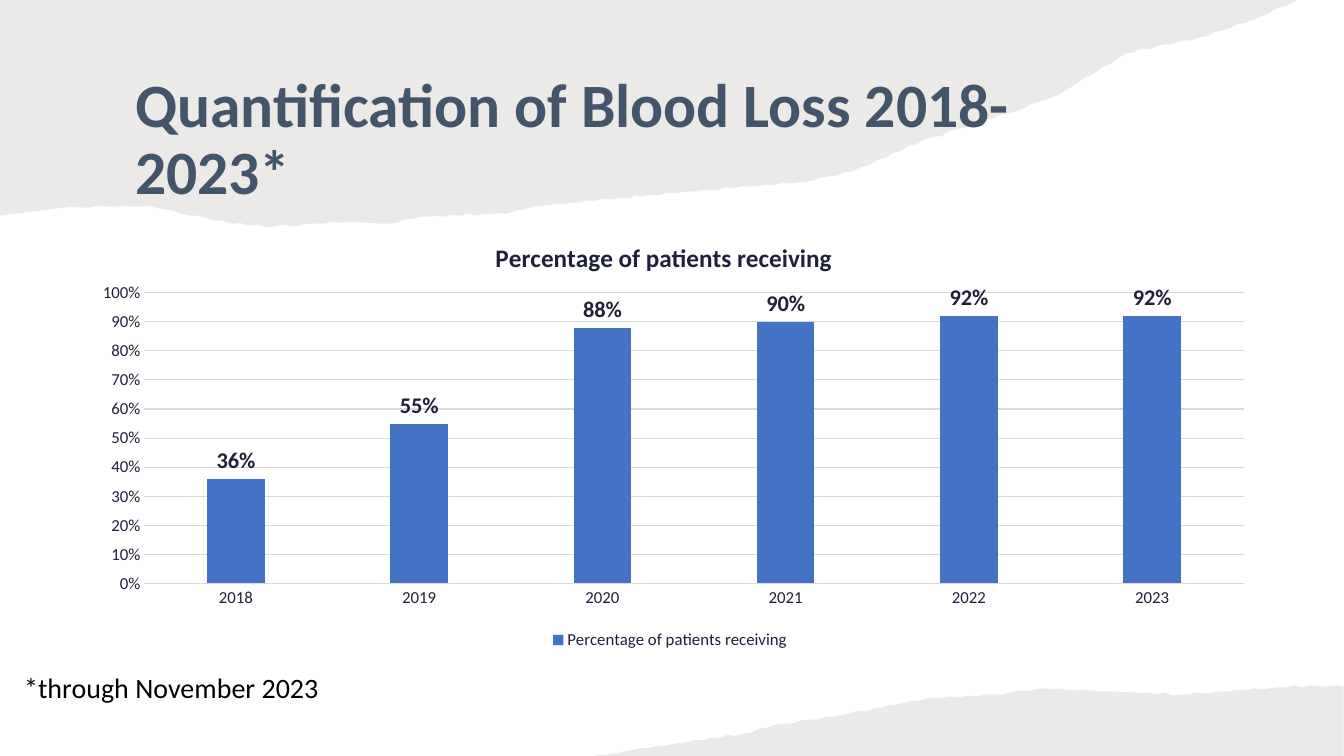
import math

import pptx
import pptx.chart.data
import pptx.enum.chart
import pptx.enum.text
import pptx.oxml
import pptx.oxml.ns
import pptx.util
from pptx.dml.color import RGBColor
from pptx.util import Cm, Pt

SLATE = RGBColor(0x44, 0x54, 0x6A)
NAVY = RGBColor(0x1F, 0x21, 0x3A)
BLACK = RGBColor(0x00, 0x00, 0x00)
BLUE = RGBColor(0x44, 0x72, 0xC4)
GRID_GRAY = RGBColor(0xD9, 0xD9, 0xD9)
PAPER = RGBColor(0x82, 0x76, 0x6A)

# Main bends of the torn edges, in hundredths of an inch
OUTLINE_UNIT = Cm(0.0254)
TOP_CORNERS = [(0, 0)]
TOP_EDGE = [(1287, 0), (1243, 20), (1190, 37), (1117, 53), (1052, 93), (1001, 112),
            (917, 139), (846, 170), (800, 180), (686, 190), (591, 199), (528, 205),
            (503, 212), (418, 215), (385, 222), (346, 220), (262, 225), (214, 219),
            (147, 204), (63, 206), (0, 214)]
BOTTOM_CORNERS = [(1333, 750)]
BOTTOM_EDGE = [(589, 750), (668, 738), (737, 728), (769, 719), (828, 711), (866, 703),
               (920, 693), (985, 689), (1036, 683), (1171, 689), (1300, 680), (1333, 681)]

METRIC = "Percentage of patients receiving"
SHARES = {"2018": 0.36, "2019": 0.55, "2020": 0.88,
          "2021": 0.90, "2022": 0.92, "2023": 0.92}


def roughen(edge, step=8):
    """Split an edge into short steps with a slight ripple."""
    points = []
    for (x1, y1), (x2, y2) in zip(edge, edge[1:]):
        count = max(1, round(abs(x2 - x1) / step))
        for index in range(count):
            part = index / count
            x = x1 + (x2 - x1) * part
            ripple = math.sin(x * 2) if index else 0
            points.append((x, y1 + (y2 - y1) * part + ripple))
    return points + [edge[-1]]


class SlideBuilder:
    """Holds the style and the current slide."""

    font_name = "Calibri"

    def __init__(self, presentation):
        title_only = presentation.slide_layouts[5]
        self.slide = presentation.slides.add_slide(title_only)

    def style_font(self, font, size, color, bold=False):
        font.name = self.font_name
        font.size = Pt(size)
        font.bold = bold
        font.color.rgb = color

    def fill_text(self, shape, text, size, color, bold=False):
        frame = shape.text_frame
        frame.text = text
        frame.word_wrap = True
        paragraph = frame.paragraphs[0]
        paragraph.alignment = pptx.enum.text.PP_ALIGN.LEFT
        paragraph.line_spacing = 0.9
        self.style_font(paragraph.runs[0].font, size, color, bold)
        return paragraph

    def torn_paper(self, corners, edge):
        points = corners + roughen(edge)
        builder = self.slide.shapes.build_freeform(*points[0], scale=OUTLINE_UNIT)
        builder.add_line_segments(points[1:], close=True)
        shape = builder.convert_to_shape()
        shape.shadow.inherit = False
        shape.line.fill.background()
        shape.fill.solid()
        shape.fill.fore_color.rgb = PAPER
        color = shape._element.spPr.find(".//" + pptx.oxml.ns.qn("a:srgbClr"))
        color.append(pptx.oxml.parse_xml(
            f'<a:alpha {pptx.oxml.ns.nsdecls("a")} val="15000"/>'))

    def title(self, text, left, top, width, height):
        shape = self.slide.shapes.title
        shape.left, shape.top, shape.width, shape.height = left, top, width, height
        self.fill_text(shape, text, 44, SLATE, bold=True)
        shape.text_frame.vertical_anchor = pptx.enum.text.MSO_ANCHOR.MIDDLE
        # Bring the title in front of the paper
        self.slide.shapes._spTree.append(shape._element)

    def note(self, text, left, top, width, height):
        box = self.slide.shapes.add_textbox(left, top, width, height)
        self.fill_text(box, text, 20, BLACK).space_after = Pt(6)

    def place(self, element, **position):
        """Fix a chart part at fractions of the chart's size."""
        for old in element.findall(pptx.oxml.ns.qn("c:layout")):
            element.remove(old)
        inner = '<c:layoutTarget val="inner"/>' if "w" in position else ""
        modes = '<c:xMode val="edge"/><c:yMode val="edge"/>'
        values = "".join(f'<c:{key} val="{value}"/>' for key, value in position.items())
        layout = pptx.oxml.parse_xml(
            f'<c:layout {pptx.oxml.ns.nsdecls("c")}><c:manualLayout>'
            f'{inner}{modes}{values}</c:manualLayout></c:layout>')
        text = element.find(pptx.oxml.ns.qn("c:tx"))
        element.insert(0 if text is None else 1, layout)

    def column_chart(self, name, values, left, top, width, height):
        data = pptx.chart.data.CategoryChartData(number_format="0%")
        data.categories = list(values)
        data.add_series(name, list(values.values()))
        chart = self.slide.shapes.add_chart(
            pptx.enum.chart.XL_CHART_TYPE.COLUMN_CLUSTERED,
            left, top, width, height, data).chart
        self.style_font(chart.font, 12, NAVY)

        # Heading and legend
        chart.has_title = True
        heading = chart.chart_title.text_frame
        heading.text = name
        self.style_font(heading.paragraphs[0].runs[0].font, 18, NAVY, bold=True)
        chart.has_legend = True
        chart.legend.position = pptx.enum.chart.XL_LEGEND_POSITION.BOTTOM
        chart.legend.include_in_layout = False
        self.style_font(chart.legend.font, 12, NAVY)
        self.place(chart.chart_title._element, x=0.35, y=0.05)
        plot_area = chart._chartSpace.find(".//" + pptx.oxml.ns.qn("c:plotArea"))
        self.place(plot_area, x=0.06, y=0.18, w=0.92, h=0.66)

        # Axes
        for axis in (chart.category_axis, chart.value_axis):
            axis.major_tick_mark = pptx.enum.chart.XL_TICK_MARK.NONE
            self.style_font(axis.tick_labels.font, 12, NAVY)
        scale = chart.value_axis
        scale.minimum_scale, scale.maximum_scale, scale.major_unit = 0, 1, 0.1
        scale.tick_labels.number_format = "0%"
        scale.tick_labels.number_format_is_linked = False
        scale.format.line.fill.background()
        for line in (chart.category_axis.format.line, scale.major_gridlines.format.line):
            line.color.rgb = GRID_GRAY
            line.width = Pt(0.75)

        # Columns and their labels
        plot = chart.plots[0]
        plot.gap_width, plot.overlap = 219, -27
        plot.vary_by_categories = False
        series = plot.series[0]
        series.format.fill.solid()
        series.format.fill.fore_color.rgb = BLUE
        labels = series.data_labels
        labels.show_value = True
        labels.number_format = "0%"
        labels.number_format_is_linked = False
        labels.position = pptx.enum.chart.XL_LABEL_POSITION.OUTSIDE_END
        self.style_font(labels.font, 16, NAVY, bold=True)


def main():
    presentation = pptx.Presentation()
    presentation.slide_width, presentation.slide_height = Cm(33.87), Cm(19.05)
    builder = SlideBuilder(presentation)
    builder.torn_paper(TOP_CORNERS, TOP_EDGE)
    builder.title("Quantification of Blood Loss 2018-2023*",
                  Cm(3.15), Cm(1.7), Cm(26.09), Cm(3.71))
    builder.note("*through November 2023", Cm(0.36), Cm(16.87), Cm(16.59), Cm(1.12))
    builder.torn_paper(BOTTOM_CORNERS, BOTTOM_EDGE)
    builder.column_chart(METRIC, SHARES, Cm(1.83), Cm(5.38), Cm(30.12), Cm(11.1))
    presentation.save("out.pptx")


if __name__ == "__main__":
    main()
